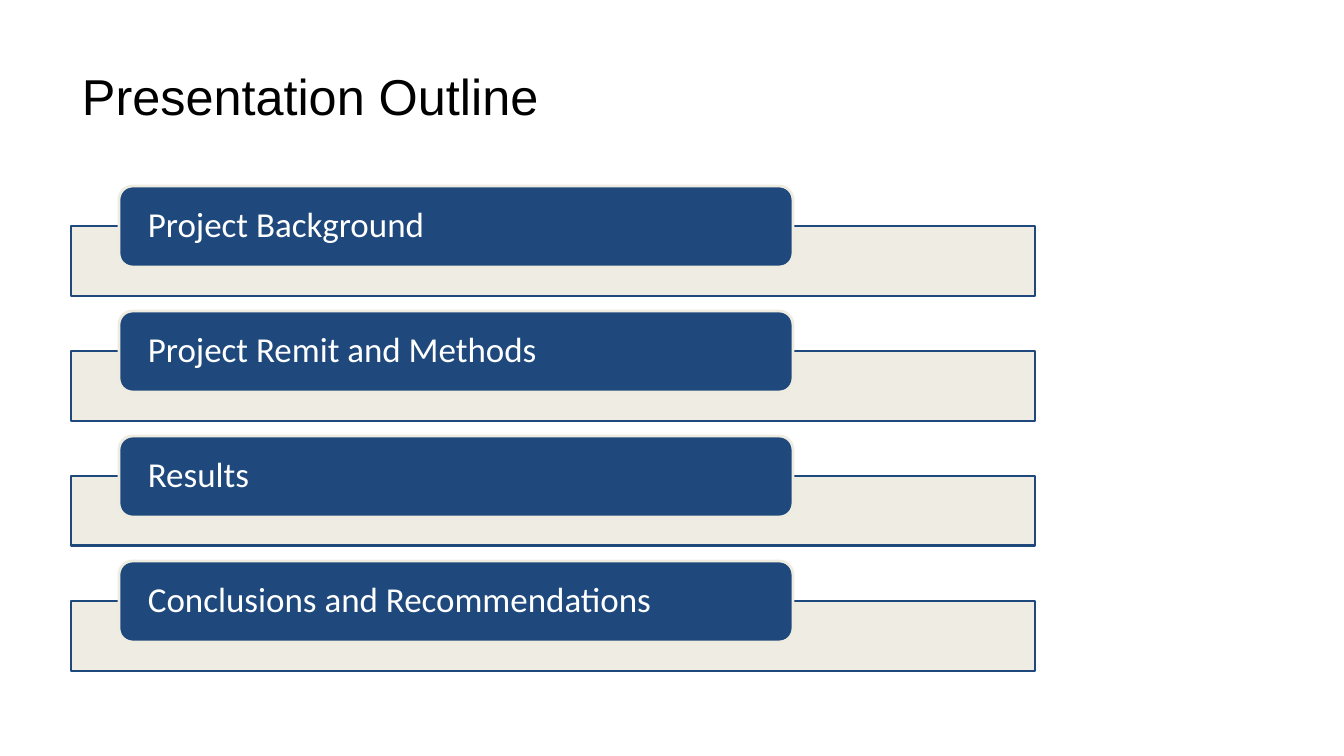
"""Build the presentation outline slide: four section labels over bars."""
import dataclasses

import pptx
import pptx.dml.color
import pptx.enum.shapes
import pptx.enum.text
import pptx.oxml
import pptx.oxml.ns
import pptx.util

TITLE = "Presentation Outline"
SECTIONS = [
    "Project Background",
    "Project Remit and Methods",
    "Results",
    "Conclusions and Recommendations",
]

SLIDE_SIZE = (1344, 756)
TITLE_BOX = (72, 55, 1207, 80)
FIRST_BAR = (71, 226, 964, 70)
FIRST_LABEL = (119, 186, 674, 81)
ROW_PITCH = 125
TITLE_INSET = 10
LABEL_INSET = 25


@dataclasses.dataclass(frozen=True)
class Theme:
    """Colours, fonts and point sizes."""
    navy: str = "1F497D"
    cream: str = "EEECE1"
    white: str = "FFFFFF"
    black: str = "000000"
    title_font: str = "Arial"
    label_font: str = "Calibri"
    title_size: int = 36
    label_size: int = 25
    outline: int = 2
    bar_opacity: int = 90


THEME = Theme()


def px(length):
    """Turn px into EMU."""
    return round(length * 914400 / 100.8)


def color(value):
    """Turn a hex string into a colour."""
    return pptx.dml.color.RGBColor.from_string(value)


def write(shape, text, font_name, size, font_color, inset):
    """Put one left-aligned, vertically centred paragraph in a shape."""
    frame = shape.text_frame
    frame.word_wrap = True
    frame.vertical_anchor = pptx.enum.text.MSO_ANCHOR.MIDDLE
    frame.margin_left = frame.margin_right = px(inset)
    frame.margin_top = frame.margin_bottom = 0
    paragraph = frame.paragraphs[0]
    paragraph.text = text
    paragraph.alignment = pptx.enum.text.PP_ALIGN.LEFT
    paragraph.font.name = font_name
    paragraph.font.size = pptx.util.Pt(size)
    paragraph.font.color.rgb = color(font_color)
    return paragraph


def add_box(slide, kind, box, row, fill, line):
    """Add a filled, outlined shape moved down to its row."""
    left, top, width, height = box
    shape = slide.shapes.add_shape(
        kind, px(left), px(top + row * ROW_PITCH), px(width), px(height))
    shape.shadow.inherit = False
    shape.fill.solid()
    shape.fill.fore_color.rgb = color(fill)
    shape.line.color.rgb = color(line)
    shape.line.width = pptx.util.Pt(THEME.outline)
    return shape


def set_opacity(shape, percent):
    """Make the solid fill of a shape partly transparent."""
    fill_color = shape.fill._xPr.find(
        pptx.oxml.ns.qn("a:solidFill")).find(pptx.oxml.ns.qn("a:srgbClr"))
    alpha = pptx.oxml.parse_xml(
        f'<a:alpha {pptx.oxml.ns.nsdecls("a")} val="{percent * 1000}"/>')
    fill_color.append(alpha)


def add_section(slide, row, text):
    """Add the bar and the label of one section."""
    kinds = pptx.enum.shapes.MSO_SHAPE
    bar = add_box(slide, kinds.RECTANGLE, FIRST_BAR, row, THEME.cream, THEME.navy)
    set_opacity(bar, THEME.bar_opacity)
    label = add_box(
        slide, kinds.ROUNDED_RECTANGLE, FIRST_LABEL, row, THEME.navy, THEME.cream)
    paragraph = write(label, text, THEME.label_font, THEME.label_size,
                      THEME.white, LABEL_INSET)
    paragraph.line_spacing = 0.9


def main():
    """Build and save the slide."""
    presentation = pptx.Presentation()
    presentation.slide_width, presentation.slide_height = map(px, SLIDE_SIZE)
    slide = presentation.slides.add_slide(presentation.slide_layouts[5])
    title = slide.shapes.title
    title.left, title.top, title.width, title.height = map(px, TITLE_BOX)
    write(title, TITLE, THEME.title_font, THEME.title_size, THEME.black, TITLE_INSET)
    for row, text in enumerate(SECTIONS):
        add_section(slide, row, text)
    presentation.save("out.pptx")


if __name__ == "__main__":
    main()
